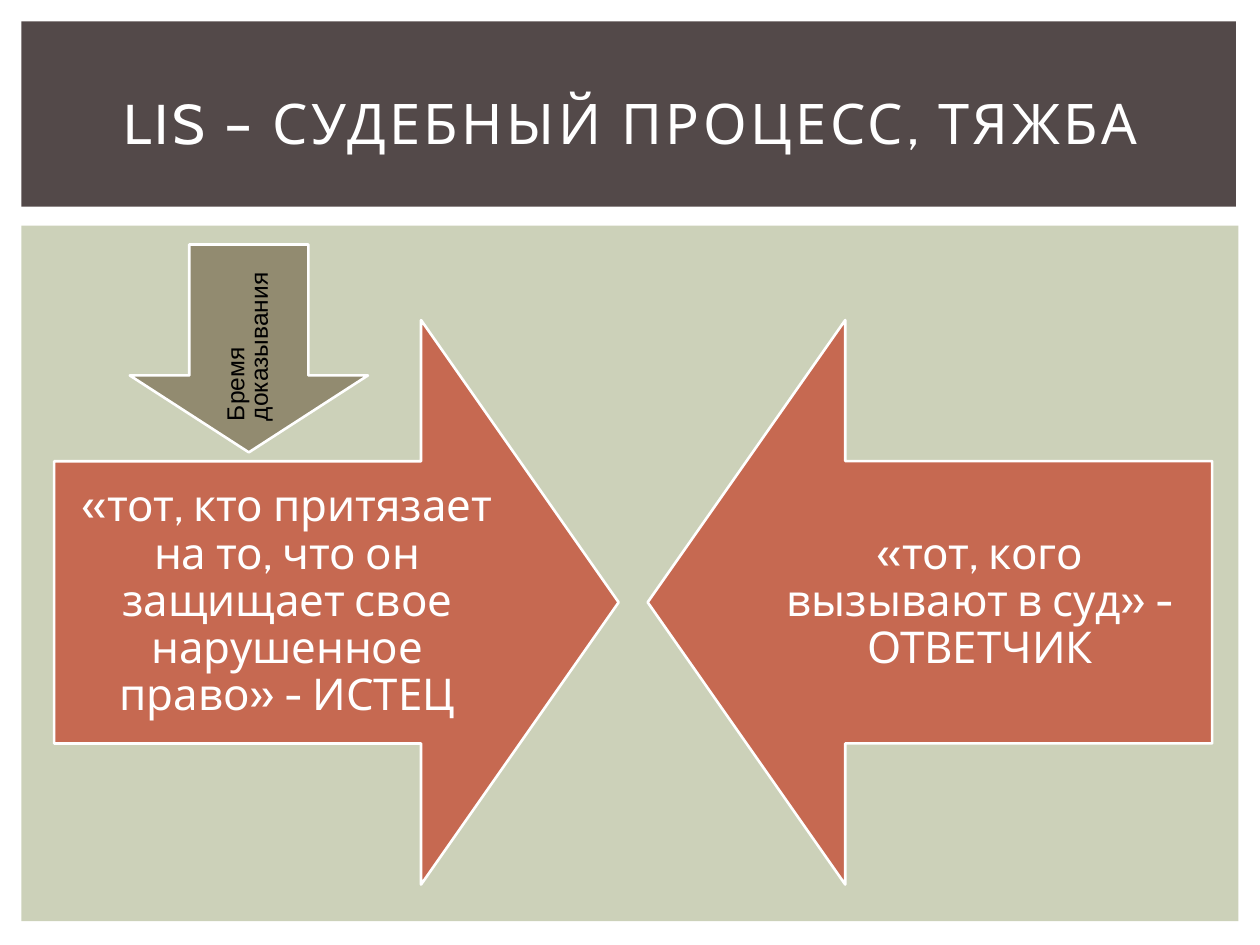
from pptx import Presentation, util as u
from pptx.dml.color import RGBColor
from pptx.enum import shapes, text

WHITE = RGBColor(0xFF, 0xFF, 0xFF)
BLACK = RGBColor(0, 0, 0)
SAGE = RGBColor(0xCC, 0xD1, 0xB9)
UMBER = RGBColor(0x53, 0x49, 0x49)
BRICK = RGBColor(0xC6, 0x69, 0x51)
OLIVE = RGBColor(0x92, 0x8B, 0x70)

COLS, ROWS = 100, 75
TITLE_ONLY = 5


def write(tf, words, size, color=WHITE, font="Cabin", align=text.PP_ALIGN.CENTER,
          anchor=text.MSO_ANCHOR.MIDDLE, spacing=1.0, inset=None, tracking=0):
    """Put one formatted paragraph in a text frame."""
    tf.word_wrap = True
    tf.auto_size = text.MSO_AUTO_SIZE.NONE
    tf.vertical_anchor = anchor
    if inset is not None:
        tf.margin_left = tf.margin_right = tf.margin_top = tf.margin_bottom = u.Inches(inset)
    p = tf.paragraphs[0]
    p.alignment = align
    p.line_spacing = spacing
    r = p.add_run()
    r.text = words
    r.font.size = u.Pt(size)
    r.font.name = font
    r.font.color.rgb = color
    if tracking:
        r.font._element.set("spc", str(tracking * 100))


class Deck:
    """Slide in progress; places are in columns and rows of the grid."""

    def __init__(self, prs):
        self.slide = prs.slides.add_slide(prs.slide_layouts[TITLE_ONLY])
        self.cell_w = prs.slide_width / COLS
        self.cell_h = prs.slide_height / ROWS

    def box(self, col, row, cols, rows):
        return (round(col * self.cell_w), round(row * self.cell_h),
                round(cols * self.cell_w), round(rows * self.cell_h))

    def title(self, place, words, **style):
        sp = self.slide.shapes.title
        sp.left, sp.top, sp.width, sp.height = self.box(*place)
        write(sp.text_frame, words, **style)
        sp.element.getparent().append(sp.element)  # in front of the band

    def shape(self, kind, place, fill):
        sp = self.slide.shapes.add_shape(kind, *self.box(*place))
        sp.shadow.inherit = False
        sp.fill.solid()
        sp.fill.fore_color.rgb = fill
        sp.line.fill.background()
        return sp

    def panel(self, place, fill):
        self.shape(shapes.MSO_SHAPE.RECTANGLE, place, fill)

    def arrow(self, place, fill, head, rotation=0):
        sp = self.shape(shapes.MSO_SHAPE.DOWN_ARROW, place, fill)
        sp.adjustments[0], sp.adjustments[1] = 0.5, head
        sp.rotation = rotation
        sp.line.color.rgb = WHITE
        sp.line.width = u.Pt(1.5)

    def label(self, place, words, rotation=0, **style):
        sp = self.slide.shapes.add_textbox(*self.box(*place))
        sp.rotation = rotation
        write(sp.text_frame, words, **style)


def main():
    prs = Presentation()
    prs.slide_width, prs.slide_height = u.Inches(10), u.Inches(7.5)
    deck = Deck(prs)

    # Body panel and title band
    deck.panel((1.7, 17.9, 96.6, 55.2), SAGE)
    deck.panel((1.7, 1.7, 96.4, 14.7), UMBER)

    # Opposing arrows: arrow column, rotation, label column, words
    side = 44.8
    parties = [
        (4.3, 270, 4.3, "«тот, кто притязает на то, что он защищает свое нарушенное право» - ИСТЕЦ"),
        (51.4, 90, 59.3, "«тот, кого вызывают в суд» - ОТВЕТЧИК"),
    ]
    for col, rotation, label_col, words in parties:
        deck.arrow((col, 25.4, side, side), BRICK, 0.35, rotation)
        deck.label((label_col, 25.4 + side / 4, 37, side / 2), words,
                   size=25, spacing=0.9, inset=0.19)

    # Title
    deck.title((4.2, 3.9, 91.7, 11.5), "LIS – СУДЕБНЫЙ ПРОЦЕСС, ТЯЖБА", size=32, tracking=2)

    # Burden of proof
    deck.arrow((10.3, 19.4, 18.9, 16.5), OLIVE, 0.37)
    deck.label((12.3, 24.5, 15, 4.8), "Бремя доказывания", rotation=270, size=14,
               color=BLACK, font="Arial", align=text.PP_ALIGN.LEFT,
               anchor=text.MSO_ANCHOR.TOP, spacing=0.8)

    prs.save("out.pptx")


if __name__ == "__main__":
    main()
